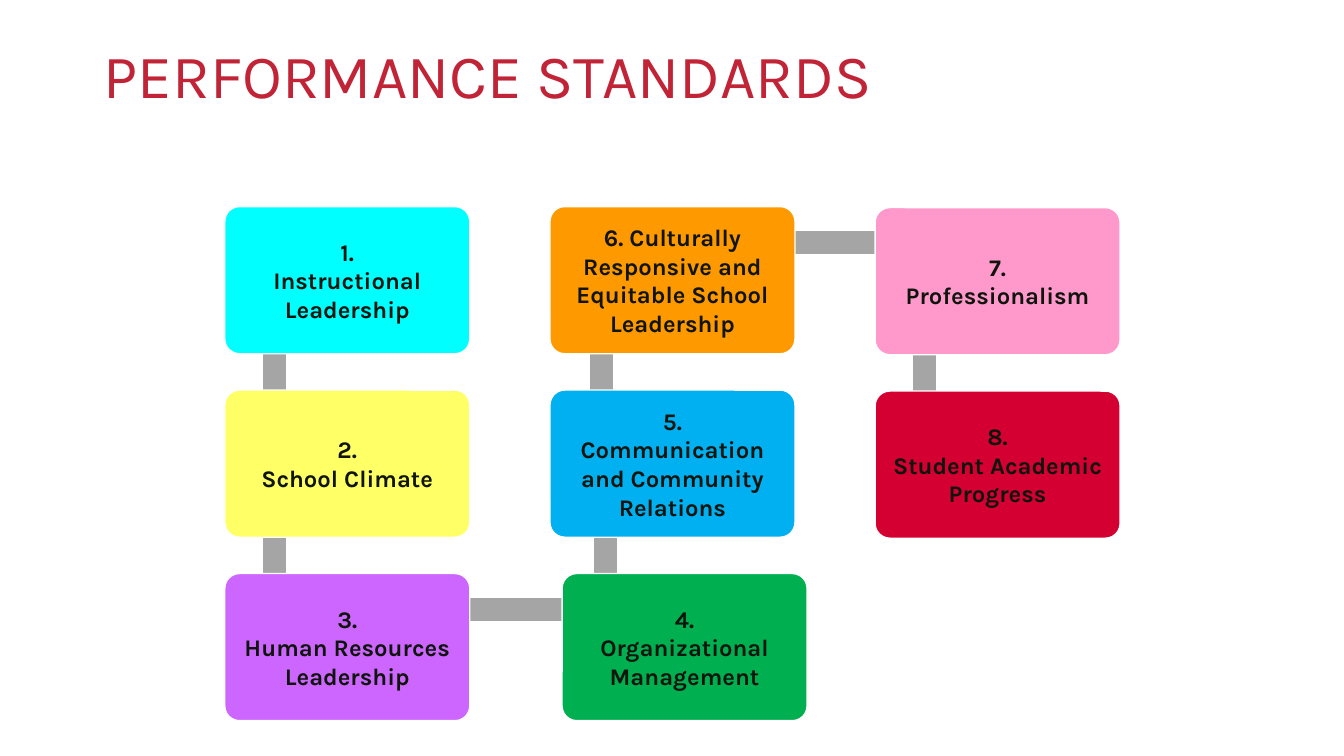
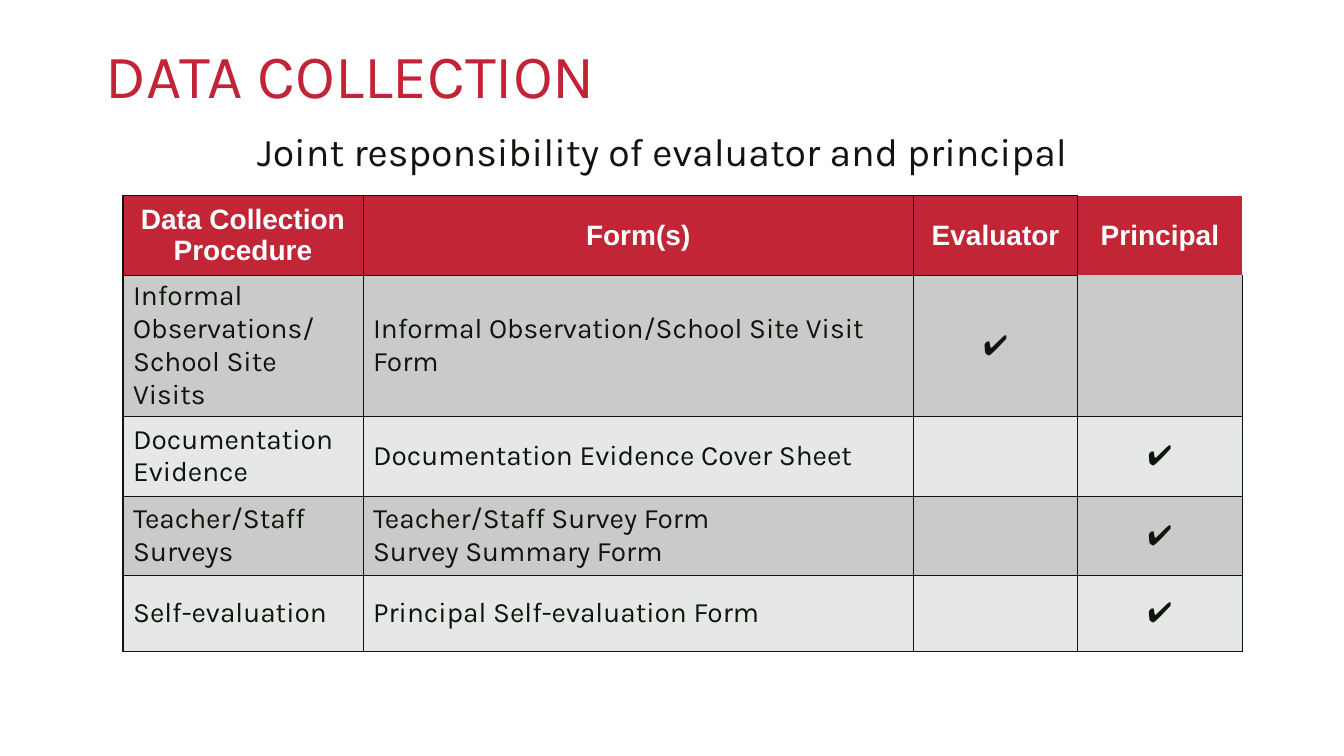
from dataclasses import dataclass
from itertools import pairwise

from lxml import etree
from pptx import Presentation
from pptx.dml.color import RGBColor
from pptx.enum.shapes import MSO_SHAPE
from pptx.enum.text import MSO_ANCHOR, MSO_AUTO_SIZE, PP_ALIGN
from pptx.oxml.ns import qn
from pptx.util import Inches, Pt

LEFT, CENTER = PP_ALIGN.LEFT, PP_ALIGN.CENTER
TOP, MIDDLE = MSO_ANCHOR.TOP, MSO_ANCHOR.MIDDLE
RECTANGLE, ROUNDED = MSO_SHAPE.RECTANGLE, MSO_SHAPE.ROUNDED_RECTANGLE
TITLE_AND_BODY, TITLE_ONLY = 1, 5
PLAIN_TABLE_STYLE = "{2D5ABB26-0587-4C30-8999-92F81FD0307C}"


@dataclass(frozen=True)
class Theme:
    font: str = "Karla"
    header_font: str = "Arial"
    title: str = "C12436"
    header: str = "C22536"
    ink: str = "0F150D"
    white: str = "FFFFFF"
    link: str = "A5A5A5"
    bands: tuple = ("CACACA", "E6E7E7")
    title_size: int = 44
    subtitle_size: int = 28
    table_size: int = 20
    box_size: int = 17


theme = Theme()


def style_text(frame, size, color, align, anchor, font=theme.font, bold=False):
    frame.word_wrap = True
    frame.vertical_anchor = anchor
    for para in frame.paragraphs:
        para.alignment = align
        para.font.name = font
        para.font.size = Pt(size)
        para.font.bold = bold
        para.font.color.rgb = RGBColor.from_string(color)


def fill_placeholder(holder, text, place, size, color, align):
    holder.left, holder.top, holder.width, holder.height = map(Inches, place)
    frame = holder.text_frame
    frame.text = text
    frame.auto_size = MSO_AUTO_SIZE.NONE
    para = frame.paragraphs[0]
    para.space_before = Pt(0)
    properties = para._p.get_or_add_pPr()
    properties.set("marL", "0")
    properties.set("indent", "0")
    etree.SubElement(properties, qn("a:buNone"))
    style_text(frame, size, color, align, TOP)


deck = Presentation()
deck.slide_width, deck.slide_height = Inches(13.33), Inches(7.5)

pages = []
for title, layout in (("PERFORMANCE STANDARDS", TITLE_ONLY),
                      ("DATA COLLECTION", TITLE_AND_BODY)):
    page = deck.slides.add_slide(deck.slide_layouts[layout])
    place = (0.93 + 0.02 * len(pages), 0.4, 11.5, 1.45)
    fill_placeholder(page.shapes.title, title, place, theme.title_size, theme.title, LEFT)
    page.shapes.title.text_frame.paragraphs[0].line_spacing = 0.9
    pages.append(page)
standards_page, data_page = pages

# Standards: a path that runs down, up and down through three columns
GRID_LEFT, GRID_TOP = 2.23, 2.05
COLUMN_STEP, ROW_STEP = 3.225, 1.82
BOX_WIDTH, BOX_HEIGHT = 2.43, 1.46
LINK_THICKNESS, LINK_DROP = 0.22, 0.25
LINK_START_ACROSS, LINK_START_DOWN = 0.49, 0.37

# column, row, text, fill, distance of a vertical link from the column's left edge
standards = [
    (0, 0, "1.\nInstructional Leadership", "00FFFF", 0.38),
    (0, 1, "2.\nSchool Climate", "FFFF66", 0.38),
    (0, 2, "3.\nHuman Resources Leadership", "CC66FF", 0),
    (1, 2, "4.\nOrganizational Management", "00B050", 0.44),
    (1, 1, "5.\nCommunication and Community Relations", "00B0F0", 0.4),
    (1, 0, "6. Culturally Responsive and Equitable School Leadership", "FF9900", 0),
    (2, 0, "7.\nProfessionalism", "FF99CC", 0.38),
    (2, 1, "8.\nStudent Academic Progress", "D50032", 0),
]

for (column, row, _, _, inset), (next_column, next_row, *_) in pairwise(standards):
    x = GRID_LEFT + column * COLUMN_STEP
    y = GRID_TOP + min(row, next_row) * ROW_STEP
    if column == next_column:
        place = (x + inset, y + LINK_START_DOWN, LINK_THICKNESS, ROW_STEP)
    else:
        place = (x + LINK_START_ACROSS, y + LINK_DROP, COLUMN_STEP, LINK_THICKNESS)
    link = standards_page.shapes.add_shape(RECTANGLE, *map(Inches, place))
    link.shadow.inherit = False
    link.fill.solid()
    link.fill.fore_color.rgb = RGBColor.from_string(theme.link)
    link.line.color.rgb = RGBColor.from_string(theme.link)
    link.line.width = Pt(0.75)

for column, row, text, color, _ in standards:
    x = GRID_LEFT + column * COLUMN_STEP + (0.12 if (column, row) == (1, 2) else 0)
    y = GRID_TOP + row * ROW_STEP + (0.01 if column == 2 else 0)
    box = standards_page.shapes.add_shape(
        ROUNDED, Inches(x), Inches(y), Inches(BOX_WIDTH), Inches(BOX_HEIGHT))
    box.adjustments[0] = 0.1
    box.shadow.inherit = False
    box.fill.solid()
    box.fill.fore_color.rgb = RGBColor.from_string(color)
    box.line.color.rgb = RGBColor.from_string(theme.white)
    box.line.width = Pt(1)
    frame = box.text_frame
    frame.margin_left = frame.margin_right = Inches(0.07)
    frame.margin_top = frame.margin_bottom = Inches(0.07)
    frame.text = text
    style_text(frame, theme.box_size, theme.ink, CENTER, MIDDLE, bold=True)

# Data collection: who is responsible for each form
fill_placeholder(data_page.placeholders[1], "Joint responsibility of evaluator and principal",
                 (-0.13, 1.21, 13.39, 0.79), theme.subtitle_size, theme.ink, CENTER)

CHECK = "✔"
records = [
    ("Data Collection Procedure", "Form(s)", "Evaluator", "Principal"),
    ("Informal Observations/ School Site Visits",
     "Informal Observation/School Site Visit Form", CHECK, ""),
    ("Documentation Evidence", "Documentation Evidence Cover Sheet", "", CHECK),
    ("Teacher/Staff Surveys", "Teacher/Staff Survey Form\nSurvey Summary Form", "", CHECK),
    ("Self-evaluation", "Principal Self-evaluation Form", "", CHECK),
]
column_widths = (2.38, 5.46, 1.63, 1.63)
row_heights = (0.79, 0.75, 0.79, 0.79, 0.75)
last_row, last_column = len(row_heights) - 1, len(column_widths) - 1

table = data_page.shapes.add_table(
    len(row_heights), len(column_widths), Inches(1.22), Inches(1.94),
    Inches(sum(column_widths)), Inches(sum(row_heights))).table
table._tbl.tblPr.find(qn("a:tableStyleId")).text = PLAIN_TABLE_STYLE
for column, width in zip(table.columns, column_widths):
    column.width = Inches(width)
for row, height in zip(table.rows, row_heights):
    row.height = Inches(height)

# Edges around the last header cell stay open
open_edges = {(0, last_column, edge) for edge in "LRTB"}
open_edges |= {(0, last_column - 1, "R"), (1, last_column, "T")}

for r, record in enumerate(records):
    for c, text in enumerate(record):
        cell = table.cell(r, c)
        outer = {"L": c == 0, "R": c == last_column, "T": r == 0, "B": r == last_row}
        for edge, is_outer in outer.items():
            if (r, c, edge) in open_edges:
                continue
            border = etree.SubElement(cell._tc.get_or_add_tcPr(), qn(f"a:ln{edge}"),
                                      w=str(Pt(1 if is_outer else 0.75)))
            paint = etree.SubElement(border, qn("a:solidFill"))
            etree.SubElement(paint, qn("a:srgbClr"), val=theme.ink)
        cell.fill.solid()
        cell.fill.fore_color.rgb = RGBColor.from_string(
            theme.bands[(r - 1) % 2] if r else theme.header)
        cell.vertical_anchor = MIDDLE
        cell.text = text
        align = CENTER if r == 0 or c > 1 else LEFT
        if r == 0:
            style_text(cell.text_frame, theme.table_size, theme.white, align, MIDDLE,
                       theme.header_font, bold=True)
        else:
            style_text(cell.text_frame, theme.table_size, theme.ink, align, MIDDLE)

deck.save("out.pptx")
